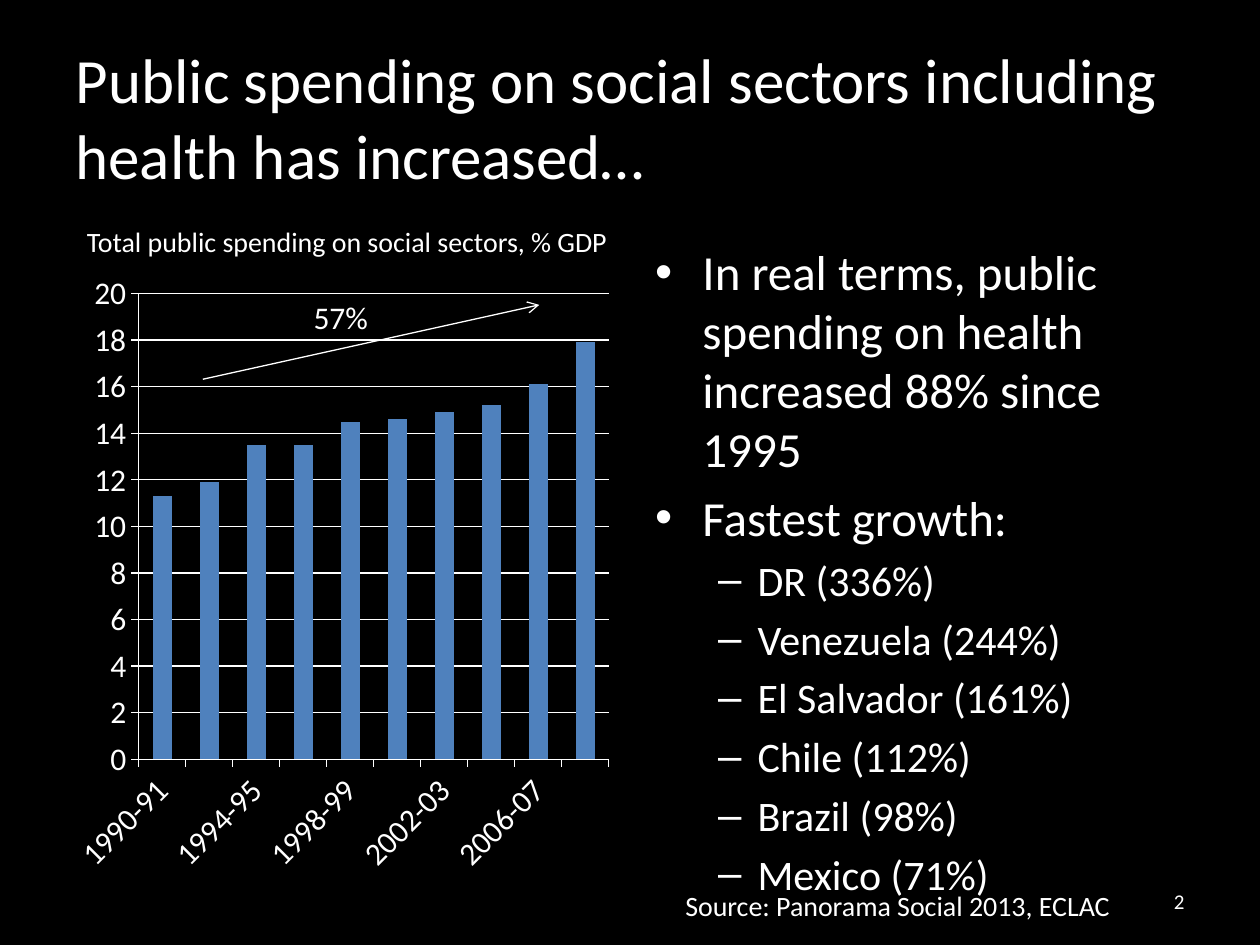
from lxml.etree import SubElement
from pptx import Presentation
from pptx.chart.data import CategoryChartData
from pptx.dml.color import RGBColor
from pptx.enum.chart import XL_CHART_TYPE, XL_TICK_MARK
from pptx.enum.shapes import MSO_CONNECTOR
from pptx.enum.text import MSO_ANCHOR, MSO_AUTO_SIZE, PP_ALIGN
from pptx.oxml.ns import qn
from pptx.util import Inches, Pt

FONT = "Calibri"
WHITE, BLACK, BLUE = "FFFFFF", "000000", "4F81BD"

TITLE = "Public spending on social sectors including health has increased…"
BULLETS = [  # level, text
    (0, "In real terms, public spending on health increased 88% since 1995"),
    (0, "Fastest growth:"),
    (1, "DR (336%)"),
    (1, "Venezuela (244%)"),
    (1, "El Salvador (161%)"),
    (1, "Chile (112%)"),
    (1, "Brazil (98%)"),
    (1, "Mexico (71%)"),
]
BULLET_SIZES = (28, 24)
SPENDING = {
    "1990-91": 11.3, "1992-93": 11.9, "1994-95": 13.5, "1996-97": 13.5,
    "1998-99": 14.5, "2000-01": 14.6, "2002-03": 14.9, "2004-05": 15.2,
    "2006-07": 16.1, "2008-09": 17.9,
}
LABELS = [  # text, size, left, top, width, height
    ("Source: Panorama Social 2013, ECLAC", 16, 5.34, 7, 3.62, 0.37),
    ("Total public spending on social sectors, % GDP", 16, 0.59, 1.73, 4.38, 0.37),
    ("57%", 18, 2.39, 2.32, 0.64, 0.4),
]
PAGE_NUMBER = ("2", 12, 7.17, 6.95, 2.33, 0.4)


def color(value):
    return RGBColor.from_string(value)


def place(shape, *bounds):
    shape.left, shape.top, shape.width, shape.height = map(Inches, bounds)


def style_font(font, size):
    font.name = FONT
    font.size = Pt(size)
    font.color.rgb = color(WHITE)


def add_span(para, text, size):
    span = para.add_run()
    span.text = text
    style_font(span.font, size)


def add_label(page, text, size, *bounds):
    box = page.shapes.add_textbox(*map(Inches, bounds))
    box.text_frame.word_wrap = False
    add_span(box.text_frame.paragraphs[0], text, size)
    return box


def add_spending_chart(page):
    data = CategoryChartData()
    data.categories = list(SPENDING)
    data.add_series("Series 1", list(SPENDING.values()))
    chart = page.shapes.add_chart(
        XL_CHART_TYPE.COLUMN_CLUSTERED,
        *map(Inches, (0.5, 2.08, 4.42, 4.95)), data).chart
    chart.has_legend = chart.has_title = False
    style_font(chart.font, 18)

    plot = chart.plots[0]
    plot.gap_width = 150
    plot.vary_by_categories = False
    fill = plot.series[0].format.fill
    fill.solid()
    fill.fore_color.rgb = color(BLUE)

    value_axis = chart.value_axis
    value_axis.minimum_scale, value_axis.maximum_scale = 0, 20
    value_axis.major_unit = 2
    value_axis.has_major_gridlines = True
    lines = [value_axis.major_gridlines.format.line]
    for axis in (chart.category_axis, value_axis):
        axis.major_tick_mark = XL_TICK_MARK.OUTSIDE
        lines.append(axis.format.line)
    for line in lines:
        line.color.rgb = color(WHITE)
        line.width = Pt(0.75)


def add_trend_arrow(page):
    arrow = page.shapes.add_connector(
        MSO_CONNECTOR.STRAIGHT, *map(Inches, (1.61, 3.01, 4.28, 2.42)))
    arrow.line.color.rgb = color(WHITE)
    arrow.line.width = Pt(0.75)
    properties = arrow.line._get_or_add_ln()
    SubElement(properties, qn("a:tailEnd"), type="arrow")
    SubElement(arrow._element.spPr, qn("a:effectLst"))


def main():
    deck = Presentation()
    deck.slide_width, deck.slide_height = Inches(10), Inches(7.5)
    page = deck.slides.add_slide(deck.slide_layouts[1])
    page.background.fill.solid()
    page.background.fill.fore_color.rgb = color(BLACK)

    title, body = page.shapes.title, page.placeholders[1]
    place(title, 0.5, 0.3, 9, 1.25)
    place(body, 5.1, 1.87, 4.42, 4.95)
    for holder in (title, body):
        holder.text_frame.auto_size = MSO_AUTO_SIZE.NONE

    heading = title.text_frame.paragraphs[0]
    heading.alignment = PP_ALIGN.LEFT
    add_span(heading, TITLE, 36)

    for index, (level, text) in enumerate(BULLETS):
        frame = body.text_frame
        para = frame.add_paragraph() if index else frame.paragraphs[0]
        para.level = level
        add_span(para, text, BULLET_SIZES[level])

    add_spending_chart(page)
    add_trend_arrow(page)
    for label in LABELS:
        add_label(page, *label)

    number = add_label(page, *PAGE_NUMBER).text_frame
    number.word_wrap = True
    number.vertical_anchor = MSO_ANCHOR.MIDDLE
    number.paragraphs[0].alignment = PP_ALIGN.RIGHT

    deck.save("out.pptx")


if __name__ == "__main__":
    main()
